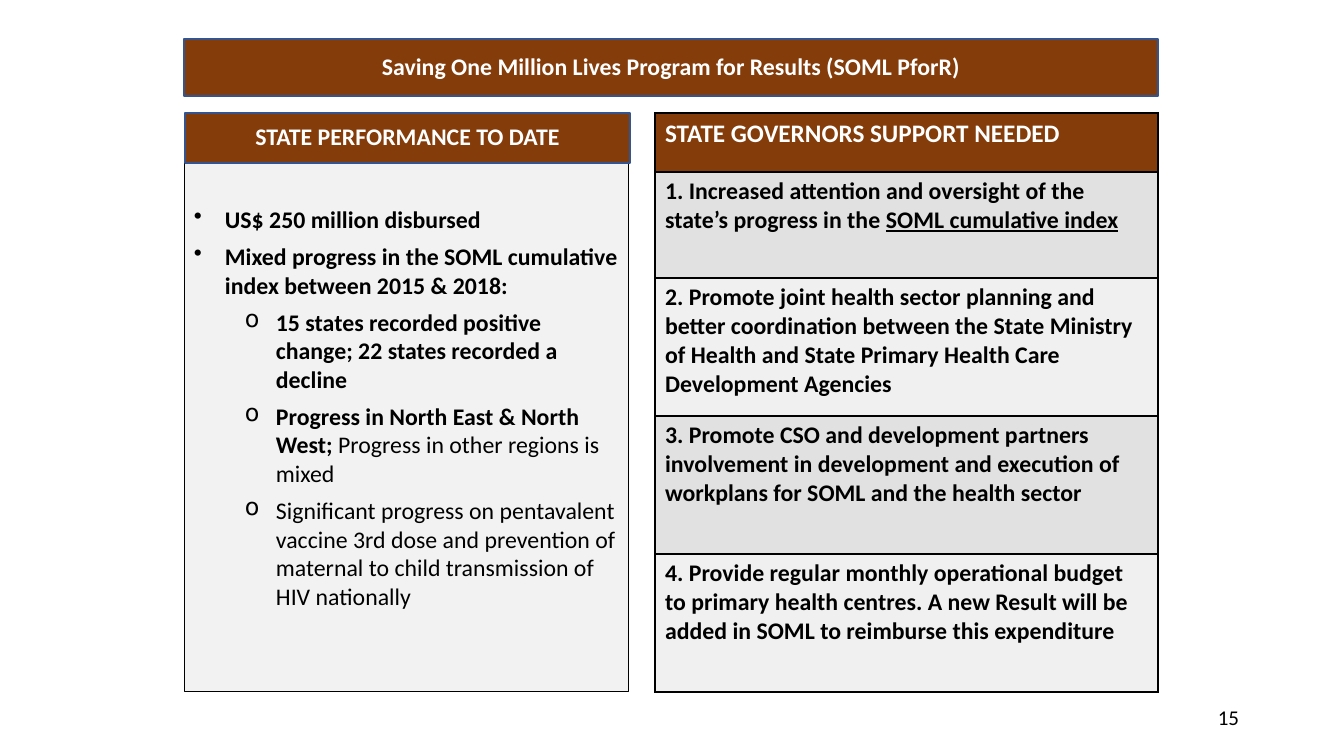
from pptx import Presentation
from pptx import util as u
from pptx.dml.color import RGBColor
from pptx.enum import shapes, text
from pptx.oxml.ns import qn
from lxml import etree

# Content
TITLE = "Saving One Million Lives Program for Results (SOML PforR)"
LEFT_HEAD = "STATE PERFORMANCE TO DATE"
PAGE = "15"
# Bullets: level, bold part, regular part
BULLETS = [
    (0, "US$ 250 million disbursed", ""),
    (0, "Mixed progress in the SOML cumulative index between 2015 & 2018:", ""),
    (1, "15 states recorded positive change; 22 states recorded a decline", ""),
    (1, "Progress in North East & North West; ", "Progress in other regions is mixed"),
    (1, "", "Significant progress on pentavalent vaccine 3rd dose and prevention of "
            "maternal to child transmission of HIV nationally"),
]
# Table rows: height, plain part, underlined part
ROWS = [
    (59, "STATE GOVERNORS SUPPORT NEEDED", ""),
    (106, "1. Increased attention and oversight of the state’s progress in the ",
     "SOML cumulative index"),
    (138, "2. Promote joint health sector planning and better coordination between "
          "the State Ministry of Health and State Primary Health Care Development Agencies", ""),
    (138, "3. Promote CSO and development partners involvement in development and "
          "execution of workplans for SOML and the health sector", ""),
    (138, "4. Provide regular monthly operational budget to primary health centres. "
          "A new Result will be added in SOML to reimburse this expenditure", ""),
]
COLORS = {"brown": "843C0B", "blue": "325491", "panel": "F2F2F2", "odd": "E1E1E1",
          "even": "F0F0F0", "black": "000000", "white": "FFFFFF"}
MARKS = "•o"
MARGINS = (31, 82)
HANG = 31


def px(n):
    return u.Emu(round(n * 914400 / 100.8))


def rgb(name):
    return RGBColor.from_string(COLORS[name])


def style(p, size, color, bold=None):
    f = p.font
    f.name, f.size, f.bold = "Calibri", u.Pt(size), bold
    f.color.rgb = rgb(color)


def add_run(p, words, bold=None, underline=None):
    if words:
        r = p.add_run()
        r.text = words
        r.font.bold, r.font.underline = bold, underline


def add_box(box, fill, line, width):
    sp = s.shapes.add_shape(shapes.MSO_SHAPE.RECTANGLE, *map(px, box))
    sp.shadow.inherit = False
    sp.fill.solid()
    sp.fill.fore_color.rgb = rgb(fill)
    sp.line.color.rgb = rgb(line)
    sp.line.width = u.Pt(width)
    sp.text_frame.word_wrap = True
    return sp


def add_banner(box, words):
    tf = add_box(box, "brown", "blue", 1).text_frame
    tf.vertical_anchor = text.MSO_ANCHOR.MIDDLE
    p = tf.paragraphs[0]
    p.text = words
    p.alignment = text.PP_ALIGN.CENTER
    p.line_spacing = 0.9
    style(p, 17, "white", True)


def add_borders(cell):
    tcPr = cell._tc.get_or_add_tcPr()
    for i, side in enumerate(("lnL", "lnR", "lnT", "lnB")):
        ln = etree.Element(qn(f"a:{side}"), w=str(u.Pt(1)))
        fill = etree.SubElement(ln, qn("a:solidFill"))
        etree.SubElement(fill, qn("a:srgbClr"), val=COLORS["black"])
        tcPr.insert(i, ln)


prs = Presentation()
prs.slide_width, prs.slide_height = px(1344), px(756)
s = prs.slides.add_slide(prs.slide_layouts[6])

# Performance panel
tf = add_box((184, 163, 445, 529), "panel", "black", 0.75).text_frame
tf.vertical_anchor = text.MSO_ANCHOR.TOP
tf.margin_top = px(42)
for i, (level, strong, regular) in enumerate(BULLETS):
    p = tf.add_paragraph() if i else tf.paragraphs[0]
    p.level = level
    p.alignment = text.PP_ALIGN.LEFT
    p.space_after = u.Pt(6)
    style(p, 17, "black")
    add_run(p, strong, bold=True)
    add_run(p, regular, bold=False)
    pPr = p._p.get_or_add_pPr()
    pPr.set("marL", str(px(MARGINS[level])))
    pPr.set("indent", str(-px(HANG)))
    mark = etree.Element(qn("a:buChar"), char=MARKS[level])
    pPr.find(qn("a:defRPr")).addprevious(mark)

# Banners
add_banner((185, 113, 445, 50), LEFT_HEAD)
add_banner((184, 39, 974, 57), TITLE)

# Support table
heights = [row[0] for row in ROWS]
table = s.shapes.add_table(len(ROWS), 1, px(655), px(113), px(503), px(sum(heights))).table
for i, (height, plain, underlined) in enumerate(ROWS):
    table.rows[i].height = px(height)
    cell = table.cell(i, 0)
    cell.fill.solid()
    cell.fill.fore_color.rgb = rgb("brown" if i == 0 else "odd" if i % 2 else "even")
    add_borders(cell)
    p = cell.text_frame.paragraphs[0]
    style(p, 17 if i else 18, "black" if i else "white", True)
    add_run(p, plain, bold=True)
    add_run(p, underlined, bold=True, underline=True)

# Page number
tf = s.shapes.add_textbox(px(947), px(697), px(302), px(40)).text_frame
tf.word_wrap = True
tf.vertical_anchor = text.MSO_ANCHOR.MIDDLE
p = tf.paragraphs[0]
p.text = PAGE
p.alignment = text.PP_ALIGN.RIGHT
style(p, 15, "black")

prs.save("out.pptx")
